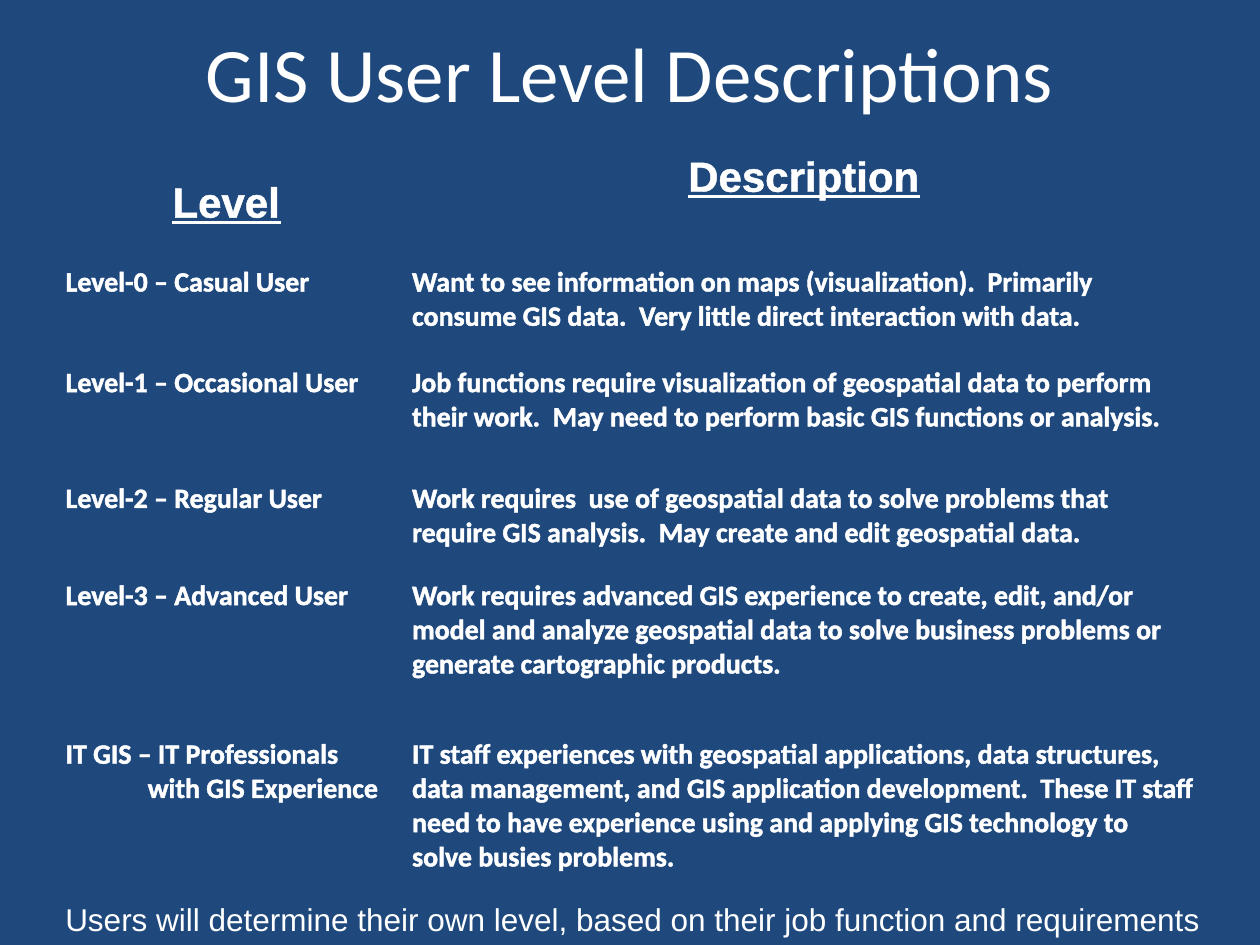
from lxml.etree import SubElement as Sub
from pptx import Presentation
from pptx.dml.color import RGBColor as Rgb
from pptx.enum.text import MSO_ANCHOR as Anchor, PP_ALIGN as Align
from pptx.oxml.ns import qn
from pptx.util import Pt

NAVY, WHITE = "1F497D", "FFFFFF"
PLAIN = "{2D5ABB26-0587-4C30-8999-92F81FD0307C}"  # no style, no grid

TITLE = dict(name="Calibri", size=Pt(44))
HEAD = dict(name="Arial", size=Pt(24), bold=True, underline=True)
BODY = dict(name="Calibri", size=Pt(16), bold=True)
NOTE = dict(name="Arial", size=Pt(18))

COLS = [198, 462]
ROWS = [63.5, 57.5, 66.2, 55.5, 90.7, 90.7]
LEVELS = [
    ("Level-0 – Casual User",
     "Want to see information on maps (visualization).  Primarily consume GIS "
     "data.  Very little direct interaction with data."),
    ("Level-1 – Occasional User",
     "Job functions require visualization of geospatial data to perform their "
     "work.  May need to perform basic GIS functions or analysis."),
    ("Level-2 – Regular User",
     "Work requires  use of geospatial data to solve problems that require GIS "
     "analysis.  May create and edit geospatial data."),
    ("Level-3 – Advanced User",
     "Work requires advanced GIS experience to create, edit, and/or model and "
     "analyze geospatial data to solve business problems or generate "
     "cartographic products."),
    ("IT GIS – IT Professionals\nwith GIS Experience",
     "IT staff experiences with geospatial applications, data structures, data "
     "management, and GIS application development.  These IT staff need to have "
     "experience using and applying GIS technology to solve busies problems."),
]


def paint(fill, tint):
    fill.solid()
    fill.fore_color.rgb = Rgb.from_string(tint)


def write(frame, text, style, align=Align.LEFT):
    frame.text = text
    for para in frame.paragraphs:
        para.alignment = align
        font = para.runs[0].font
        for key, value in style.items():
            setattr(font, key, value)
        paint(font.fill, WHITE)


def edge(frame):
    """Give the letters a thin white outline."""
    for para in frame.paragraphs:
        props = para.runs[0].font._element
        line = Sub(props, qn("a:ln"), w=str(Pt(0.75)))
        Sub(Sub(line, qn("a:solidFill")), qn("a:srgbClr"), val=WHITE)
        props.insert(0, line)


def place(shape, left, top, width, height):
    shape.left, shape.top = Pt(left), Pt(top)
    shape.width, shape.height = Pt(width), Pt(height)


def add_title(slide, text):
    title = slide.shapes.title
    place(title, 36, 16, 648, 50)
    write(title.text_frame, text, TITLE, Align.CENTER)
    title.text_frame.vertical_anchor = Anchor.MIDDLE


def add_grid(slide):
    data = [("Level", "Description"), *LEVELS]
    grid = slide.shapes.add_table(len(ROWS), len(COLS), Pt(30.25), Pt(84.25),
                                  Pt(sum(COLS)), Pt(sum(ROWS))).table
    grid.first_row = grid.horz_banding = False
    grid._tbl.tblPr.find(qn("a:tableStyleId")).text = PLAIN
    for col, width in zip(grid.columns, COLS):
        col.width = Pt(width)
    for i, (row, height) in enumerate(zip(grid.rows, ROWS)):
        row.height = Pt(height)
        for cell, text in zip(row.cells, data[i]):
            cell.fill.background()
            style, align = (BODY, Align.LEFT) if i else (HEAD, Align.CENTER)
            write(cell.text_frame, text, style, align)
            edge(cell.text_frame)
            # Continuation lines hang under the level's name
            for para in cell.text_frame.paragraphs[1:]:
                para._p.get_or_add_pPr().set("marL", str(Pt(47)))
    # The first heading sits lower than the second
    grid.cell(0, 0).vertical_anchor = Anchor.MIDDLE


def add_note(slide, text):
    box = slide.shapes.add_textbox(Pt(30.25), Pt(510.5), Pt(664), Pt(28))
    box.text_frame.word_wrap = False
    write(box.text_frame, text, NOTE)


def main():
    deck = Presentation()
    deck.slide_width, deck.slide_height = Pt(720), Pt(540)
    slide = deck.slides.add_slide(deck.slide_layouts[5])
    paint(slide.background.fill, NAVY)
    add_title(slide, "GIS User Level Descriptions")
    add_grid(slide)
    add_note(slide, "Users will determine their own level, based on their job "
                    "function and requirements")
    deck.save("out.pptx")


if __name__ == "__main__":
    main()
